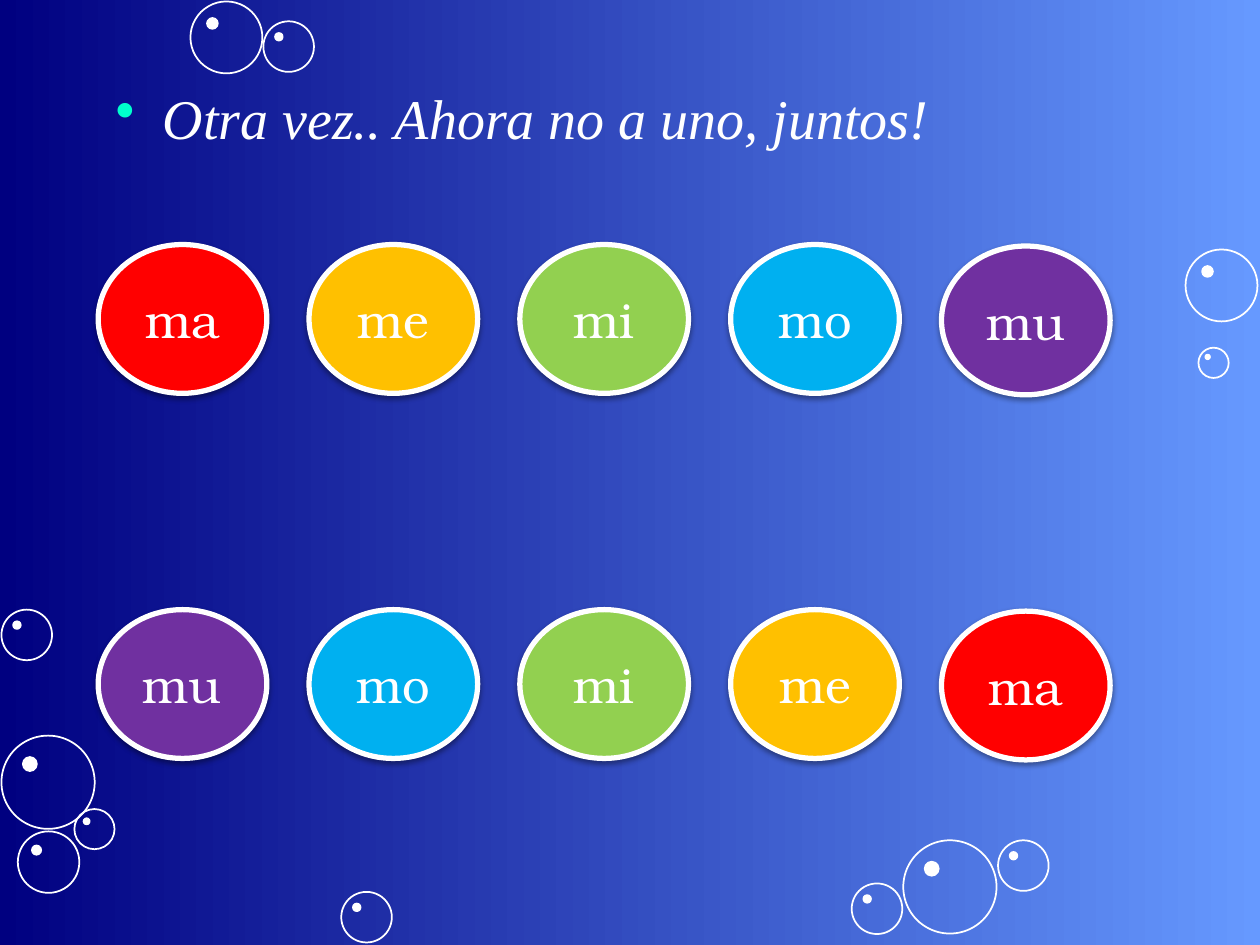
from dataclasses import dataclass

from lxml.etree import SubElement
from pptx import Presentation
from pptx.dml.color import RGBColor as Rgb
from pptx.enum.shapes import MSO_SHAPE as Preset
from pptx.enum.text import MSO_ANCHOR as Anchor, PP_ALIGN as Align
from pptx.oxml.ns import qn
from pptx.util import Cm, Pt


@dataclass(frozen=True)
class Theme:
    white: str = "FFFFFF"
    bullet: str = "00FFCC"
    background: tuple = ("000080", "6699FF")
    title_font: str = "Times New Roman"
    title_size: int = 32
    syllable_font: str = "TeX Gyre Bonum"
    syllable_size: int = 28
    bubble_line: int = 1
    syllable_line: int = 3


THEME = Theme()
SYLLABLE_COLORS = {
    "ma": "FF0000", "me": "FFC000", "mi": "92D050", "mo": "00B0F0", "mu": "7030A0",
}
# left, top, diameter in cm
BUBBLES = [
    (0.03, 14.83, 1.88), (1.5, 16.31, 0.81), (0.36, 16.76, 1.24),
    (6.88, 17.98, 1.02), (0.03, 12.29, 1.02),
    (18.21, 16.94, 1.88), (17.17, 17.81, 1.02), (20.12, 16.94, 1.02),
    (23.9, 5.03, 1.45), (24.16, 7.01, 0.61),
    (3.84, 0.03, 1.45), (5.31, 0.43, 1.02),
]


def add_ellipse(slide, box, fill, line_width):
    shape = slide.shapes.add_shape(Preset.OVAL, *map(Cm, box))
    shape.shadow.inherit = False
    if fill:
        shape.fill.solid()
        shape.fill.fore_color.rgb = Rgb.from_string(fill)
    else:
        shape.fill.background()
    shape.line.color.rgb = Rgb.from_string(THEME.white)
    shape.line.width = Pt(line_width)
    return shape


def add_run(paragraph, text, font, size, italic=False):
    run = paragraph.add_run()
    run.text = text
    run.font.name = font
    run.font.size = Pt(size)
    run.font.italic = italic
    run.font.color.rgb = Rgb.from_string(THEME.white)


def add_soft_shadow(shape):
    """Fill the shape's empty effect list with a shadow falling downwards."""
    effects = shape.element.spPr.find(qn("a:effectLst"))
    shadow = SubElement(effects, qn("a:outerShdw"), blurRad="40000", dist="20000",
                        dir="5400000", rotWithShape="0")
    color = SubElement(shadow, qn("a:srgbClr"), val="000000")
    SubElement(color, qn("a:alpha"), val="38000")


def paint_background(slide):
    fill = slide.background.fill
    fill.gradient()
    fill.gradient_angle = 0
    for stop, color, position in zip(fill.gradient_stops, THEME.background, (0, 1)):
        stop.color.rgb = Rgb.from_string(color)
        stop.position = position


def add_bubble(slide, left, top, diameter):
    """Draw a ring with a small highlight at its upper left."""
    add_ellipse(slide, (left, top, diameter, diameter), None, THEME.bubble_line)
    offset, size = 0.23 * diameter, 0.15 * diameter
    add_ellipse(slide, (left + offset, top + offset, size, size),
                THEME.white, THEME.bubble_line)


def add_instruction(slide, box, text):
    frame = slide.shapes.add_textbox(*map(Cm, box)).text_frame
    frame.word_wrap = True
    paragraph = frame.paragraphs[0]
    paragraph.space_before = Pt(0.2 * THEME.title_size)
    properties = paragraph._p.get_or_add_pPr()
    indent = Cm(0.95)
    properties.set("marL", str(indent))
    properties.set("indent", str(-indent))
    color = SubElement(properties, qn("a:buClr"))
    SubElement(color, qn("a:srgbClr"), val=THEME.bullet)
    SubElement(properties, qn("a:buChar"), char="•")
    add_run(paragraph, text, THEME.title_font, THEME.title_size, italic=True)


def add_syllable_row(slide, left, top, syllables):
    width, height, pitch, last_drop = 3.4, 3, 4.25, 0.03
    for index, syllable in enumerate(syllables):
        drop = last_drop if index == len(syllables) - 1 else 0
        shape = add_ellipse(slide, (left + index * pitch, top + drop, width, height),
                            SYLLABLE_COLORS[syllable], THEME.syllable_line)
        add_soft_shadow(shape)
        shape.text_frame.vertical_anchor = Anchor.MIDDLE
        paragraph = shape.text_frame.paragraphs[0]
        paragraph.alignment = Align.CENTER
        add_run(paragraph, syllable, THEME.syllable_font, THEME.syllable_size)


def main():
    presentation = Presentation()
    presentation.slide_width, presentation.slide_height = Cm(25.4), Cm(19.05)
    slide = presentation.slides.add_slide(presentation.slide_layouts[6])
    paint_background(slide)
    for bubble in BUBBLES:
        add_bubble(slide, *bubble)
    add_instruction(slide, (2.08, 1.55, 21.59, 2.39), "Otra vez.. Ahora no a uno, juntos!")
    syllables = list(SYLLABLE_COLORS)
    add_syllable_row(slide, 1.98, 4.93, syllables)
    add_syllable_row(slide, 1.98, 12.29, syllables[::-1])
    presentation.save("out.pptx")


if __name__ == "__main__":
    main()
